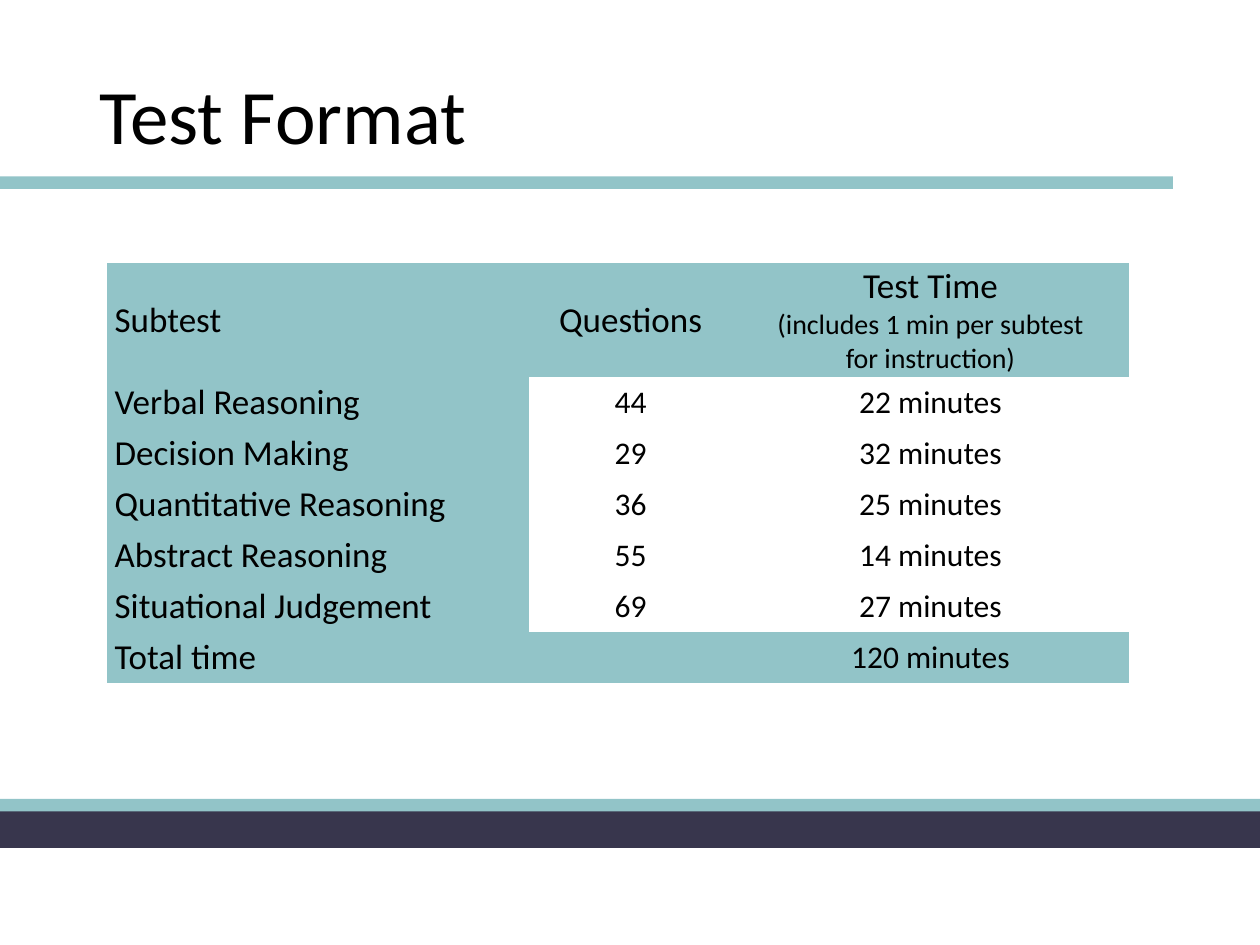
from pptx import Presentation
from pptx import util as u
from pptx.dml.color import RGBColor
from pptx.enum import shapes, text

TEAL = RGBColor(0x92, 0xC4, 0xC8)
NAVY = RGBColor(0x38, 0x36, 0x4D)
BLACK = RGBColor(0, 0, 0)
NO_STYLE = "{2D5ABB26-0587-4C30-8999-92F81FD0307C}"

ROWS = [
    ("Subtest", "Questions", "Test Time\n(includes 1 min per subtest\nfor instruction)"),
    ("Verbal Reasoning", "44", "22 minutes"),
    ("Decision Making", "29", "32 minutes"),
    ("Quantitative Reasoning", "36", "25 minutes"),
    ("Abstract Reasoning", "55", "14 minutes"),
    ("Situational Judgement", "69", "27 minutes"),
    ("Total time", "", "120 minutes"),
]


class SlideBuilder:
    """Holds the style and the current slide, and adds each kind of element."""

    font_name = "Calibri"

    def __init__(self, slide):
        self.slide = slide

    def format_font(self, font, size):
        font.name = self.font_name
        font.size = u.Pt(size)
        font.color.rgb = BLACK

    def bar(self, top, width, height, color):
        shape = self.slide.shapes.add_shape(
            shapes.MSO_SHAPE.RECTANGLE, 0, u.Inches(top), u.Inches(width), u.Inches(height))
        shape.shadow.inherit = False
        shape.fill.solid()
        shape.fill.fore_color.rgb = color
        shape.line.fill.background()

    def title(self, wording):
        shape = self.slide.shapes.title
        self.slide.shapes._spTree.append(shape._element)
        shape.left, shape.top = u.Inches(0.69), u.Inches(0.4)
        shape.width, shape.height = u.Inches(8.62), u.Inches(1.1)
        frame = shape.text_frame
        frame.text = wording
        frame.vertical_anchor = text.MSO_ANCHOR.MIDDLE
        paragraph = frame.paragraphs[0]
        paragraph.alignment = text.PP_ALIGN.LEFT
        paragraph.line_spacing = 0.9
        self.format_font(paragraph.runs[0].font, 44)

    def cell(self, cell, wording, sizes, filled, centred):
        cell.margin_left = cell.margin_right = u.Inches(0.06)
        cell.margin_top, cell.margin_bottom = u.Inches(0.01), 0
        cell.vertical_anchor = text.MSO_ANCHOR.MIDDLE
        if filled:
            cell.fill.solid()
            cell.fill.fore_color.rgb = TEAL
        else:
            cell.fill.background()
        cell.text_frame.text = wording
        for paragraph, size in zip(cell.text_frame.paragraphs, sizes):
            paragraph.alignment = text.PP_ALIGN.CENTER if centred else text.PP_ALIGN.LEFT
            self.format_font(paragraph.font, size)
            for run in paragraph.runs:
                self.format_font(run.font, size)

    def table(self, rows, widths, left, top, height, header_height):
        frame = self.slide.shapes.add_table(
            len(rows), len(widths), u.Inches(left), u.Inches(top),
            u.Inches(sum(widths)), u.Inches(height))
        table = frame.table
        table.first_row = table.horz_banding = False
        table._tbl.tblPr[0].text = NO_STYLE
        for column, width in zip(table.columns, widths):
            column.width = u.Inches(width)
        last = len(rows) - 1
        for i, row in enumerate(rows):
            row_height = (height - header_height) / last if i else header_height
            table.rows[i].height = u.Inches(row_height)
            for j, wording in enumerate(row):
                sizes = (20, 16, 16) if i == 0 or j == 0 else (18,)
                self.cell(table.cell(i, j), wording, sizes, i in (0, last) or j == 0, j > 0)


def main():
    presentation = Presentation()
    presentation.slide_width, presentation.slide_height = u.Inches(10), u.Inches(7.5)
    builder = SlideBuilder(presentation.slides.add_slide(presentation.slide_layouts[5]))
    builder.bar(6.43, 10, 0.3, NAVY)
    builder.bar(6.34, 10, 0.1, TEAL)
    builder.bar(1.4, 9.31, 0.1, TEAL)
    builder.title("Test Format")
    builder.table(ROWS, (3.35, 1.61, 3.15), 0.85, 2.09, 3.33, 0.9)
    presentation.save("out.pptx")


if __name__ == "__main__":
    main()
